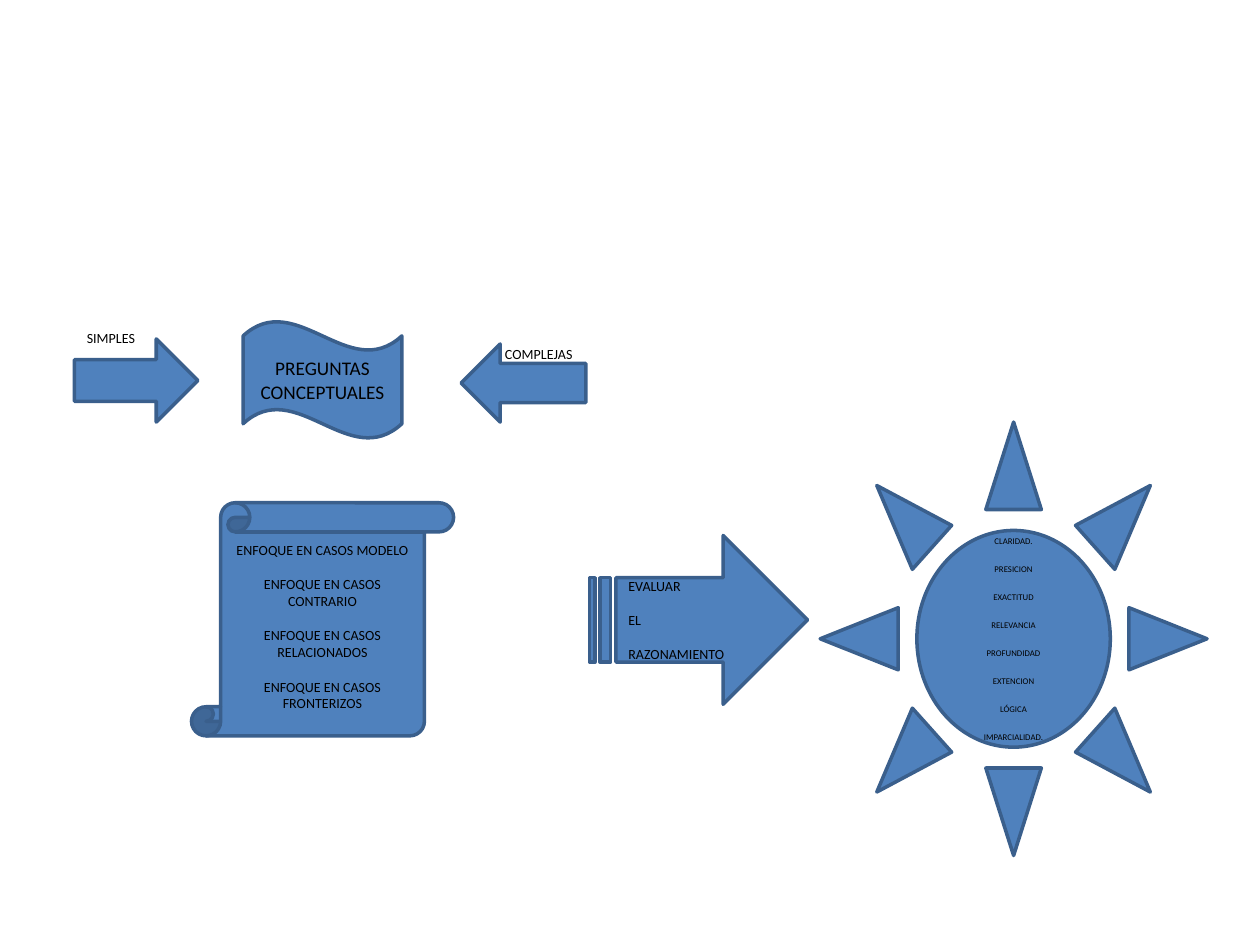
from pptx import Presentation
from pptx.dml.color import RGBColor
from pptx.enum.shapes import MSO_SHAPE as SHAPE
from pptx.enum.text import MSO_ANCHOR as ANCHOR, PP_ALIGN as ALIGN
from pptx.util import Inches, Pt

FILL, LINE, TEXT = "4F81BD", "3A5F8C", "000000"


def rgb(value):
    return RGBColor.from_string(value)


def write(tf, lines, size, align=ALIGN.CENTER, after=0):
    for i, line in enumerate(lines):
        p = tf.paragraphs[0] if i == 0 else tf.add_paragraph()
        p.alignment, p.space_after = align, Pt(after)
        r = p.add_run()
        r.text = line
        for name, value in {"name": "Calibri", "size": Pt(size)}.items():
            setattr(r.font, name, value)
        r.font.color.rgb = rgb(TEXT)


def add_figure(s, kind, box, lines=(), size=8, **fmt):
    sp = s.shapes.add_shape(kind, *map(Inches, box))
    sp.shadow.inherit = False
    sp.fill.solid()
    sp.fill.fore_color.rgb = rgb(FILL)
    sp.line.color.rgb = rgb(LINE)
    sp.line.width = Pt(2)
    tf = sp.text_frame
    tf.word_wrap = True
    tf.vertical_anchor = ANCHOR.MIDDLE
    write(tf, lines, size, **fmt)


def add_label(s, box, text):
    tf = s.shapes.add_textbox(*map(Inches, box)).text_frame
    tf.word_wrap = False
    write(tf, [text], 8, ALIGN.LEFT)


# Kinds of question: a wave between two inward arrows
def add_questions(s, x, y):
    add_label(s, (x, y + 0.02, 0.59, 0.24), "SIMPLES")
    add_figure(s, SHAPE.RIGHT_ARROW, (x, y + 0.14, 0.98, 0.66))
    add_figure(s, SHAPE.WAVE, (x + 1.34, y, 1.26, 0.93),
               ["PREGUNTAS CONCEPTUALES"], 11)
    add_figure(s, SHAPE.LEFT_ARROW, (x + 3.07, y + 0.18, 0.99, 0.62))
    add_label(s, (x + 3.32, y + 0.14, 0.74, 0.24), "COMPLEJAS")


# Scroll listing the kinds of case
def add_cases(s, box):
    cases = ["MODELO", "CONTRARIO", "RELACIONADOS", "FRONTERIZOS"]
    add_figure(s, SHAPE.VERTICAL_SCROLL, box,
               [f"ENFOQUE EN CASOS {case}" for case in cases], after=10)


# Striped arrow pointing to the sun of standards
def add_reasoning(s, x, y):
    add_figure(s, SHAPE.STRIPED_RIGHT_ARROW, (x, y + 0.9, 1.73, 1.34),
               ["EVALUAR", "EL", "RAZONAMIENTO"], align=ALIGN.LEFT, after=10)
    standards = ["CLARIDAD.", "PRESICION", "EXACTITUD", "RELEVANCIA",
                 "PROFUNDIDAD", "EXTENCION", "LÓGICA", "IMPARCIALIDAD."]
    add_figure(s, SHAPE.SUN, (x + 1.83, y, 3.07, 3.44), standards, 5, after=10)


def main():
    prs = Presentation()
    prs.slide_width, prs.slide_height = Inches(10), Inches(7.5)
    s = prs.slides.add_slide(prs.slide_layouts[6])
    add_questions(s, 0.59, 2.55)
    add_cases(s, (1.52, 3.99, 2.08, 1.85))
    add_reasoning(s, 4.68, 3.35)
    prs.save("out.pptx")


if __name__ == "__main__":
    main()
